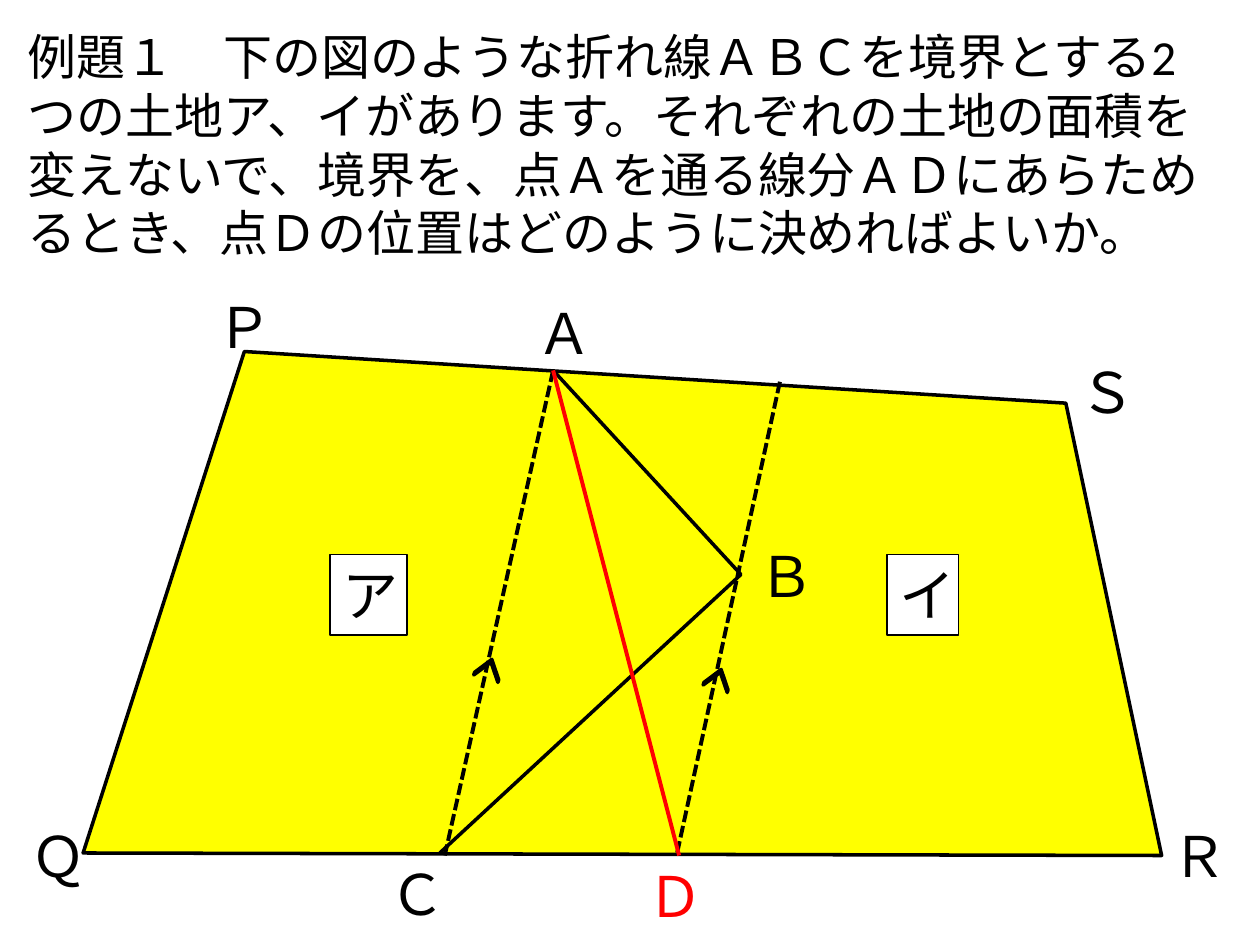
from dataclasses import dataclass
from typing import Optional

from lxml.etree import SubElement
from pptx import Presentation
from pptx.dml.color import RGBColor
from pptx.enum.dml import MSO_LINE_DASH_STYLE as Dash
from pptx.enum.shapes import MSO_CONNECTOR as Connector, MSO_SHAPE as Preset
from pptx.enum.text import MSO_AUTO_SIZE as AutoSize
from pptx.oxml.ns import qn
from pptx.util import Inches, Pt

Point = tuple[float, float]


@dataclass(frozen=True)
class Theme:
    ink: RGBColor = RGBColor(0, 0, 0)
    answer: RGBColor = RGBColor(255, 0, 0)
    land: RGBColor = RGBColor(255, 255, 0)
    paper: RGBColor = RGBColor(255, 255, 255)
    font: str = "Calibri"
    question_size: int = 28
    label_size: int = 32
    frame_width: float = 0.75
    outline_width: float = 2
    segment_width: float = 2.25


THEME = Theme()


@dataclass(frozen=True)
class Label:
    text: str
    left: float
    top: float
    width: float
    height: float = 0.64
    color: RGBColor = THEME.ink
    size: int = THEME.label_size
    wrap: bool = False
    framed: bool = False


@dataclass(frozen=True)
class Segment:
    start: Point
    end: Point
    color: RGBColor = THEME.ink
    dashed: bool = False


P, Q, R, S = (1.94, 2.79), (0.66, 6.77), (9.22, 6.79), (8.46, 3.2)
A, B, C = (4.39, 2.94), (5.88, 4.56), (3.49, 6.77)

QUESTION = Label(
    "例題１　下の図のような折れ線ＡＢＣを境界とする2つの土地ア、イがあります。"
    "それぞれの土地の面積を変えないで、境界を、点Ａを通る線分ＡＤにあらためるとき、"
    "点Ｄの位置はどのように決めればよいか。",
    0.12, 0.16, 9.65, 1.99, size=THEME.question_size, wrap=True,
)
LABELS = [
    Label("ア", 2.62, 4.4, 0.61, framed=True),
    Label("イ", 7.04, 4.4, 0.57, framed=True),
    Label("Ａ", 4.16, 2.32, 0.52),
    Label("Ｂ", 5.92, 4.25, 0.55),
    Label("Ｓ", 8.47, 2.79, 0.54),
    Label("Ｒ", 9.2, 6.47, 0.54),
    Label("Ｑ", 0.14, 6.47, 0.56),
    Label("Ｐ", 1.62, 2.27, 0.52),
    Label("Ｃ", 2.99, 6.77, 0.54),
    Label("Ｄ", 5.04, 6.79, 0.66, color=THEME.answer, wrap=True),
]
PARALLELS = [
    Segment(A, (3.53, 6.79), dashed=True),
    Segment((6.19, 3.03), (5.37, 6.79), dashed=True),
]
NEW_BORDER = Segment(A, (5.39, 6.79), color=THEME.answer)
PARALLEL_MARKS: list[Point] = [(3.8, 5.21), (5.62, 5.29)]


def set_line(line, color: RGBColor, width: float) -> None:
    line.color.rgb = color
    line.width = Pt(width)


def draw_label(slide, label: Label) -> None:
    box = slide.shapes.add_textbox(
        Inches(label.left), Inches(label.top), Inches(label.width), Inches(label.height)
    )
    frame = box.text_frame
    frame.text = label.text
    frame.word_wrap = label.wrap
    frame.auto_size = AutoSize.SHAPE_TO_FIT_TEXT
    for run in frame.paragraphs[0].runs:
        run.font.name = THEME.font
        run.font.size = Pt(label.size)
        run.font.color.rgb = label.color
    if label.framed:
        box.fill.solid()
        box.fill.fore_color.rgb = THEME.paper
        set_line(box.line, THEME.ink, THEME.frame_width)


def draw_path(slide, points: list[Point], fill: Optional[RGBColor] = None) -> None:
    corners = [(Inches(x), Inches(y)) for x, y in points]
    builder = slide.shapes.build_freeform(*corners[0])
    builder.add_line_segments(corners[1:], close=fill is not None)
    outline = builder.convert_to_shape()
    outline.shadow.inherit = False
    if fill is None:
        outline.fill.background()
    else:
        outline.fill.solid()
        outline.fill.fore_color.rgb = fill
    set_line(outline.line, THEME.ink, THEME.outline_width)


def draw_segment(slide, segment: Segment) -> None:
    ends = [Inches(value) for value in segment.start + segment.end]
    connector = slide.shapes.add_connector(Connector.STRAIGHT, *ends)
    set_line(connector.line, segment.color, THEME.segment_width)
    if segment.dashed:
        connector.line.dash_style = Dash.SQUARE_DOT
    SubElement(connector.element.spPr, qn("a:effectLst"))


def draw_parallel_mark(slide, corner: Point) -> None:
    left, top = corner
    mark = slide.shapes.add_shape(
        Preset.CHEVRON, Inches(left), Inches(top), Inches(0.16), Inches(0.2)
    )
    mark.adjustments[0] = 0.86
    mark.rotation = 287.2
    mark.shadow.inherit = False
    mark.fill.solid()
    mark.fill.fore_color.rgb = THEME.ink
    set_line(mark.line, THEME.ink, THEME.outline_width)


def main() -> None:
    deck = Presentation()
    deck.slide_width, deck.slide_height = Inches(10), Inches(7.5)
    slide = deck.slides.add_slide(deck.slide_layouts[6])

    draw_label(slide, QUESTION)
    draw_path(slide, [P, Q, R, S], fill=THEME.land)
    draw_path(slide, [A, B, C])
    for label in LABELS:
        draw_label(slide, label)
    for parallel in PARALLELS:
        draw_segment(slide, parallel)
    for corner in PARALLEL_MARKS:
        draw_parallel_mark(slide, corner)
    draw_segment(slide, NEW_BORDER)

    deck.save("out.pptx")


if __name__ == "__main__":
    main()
